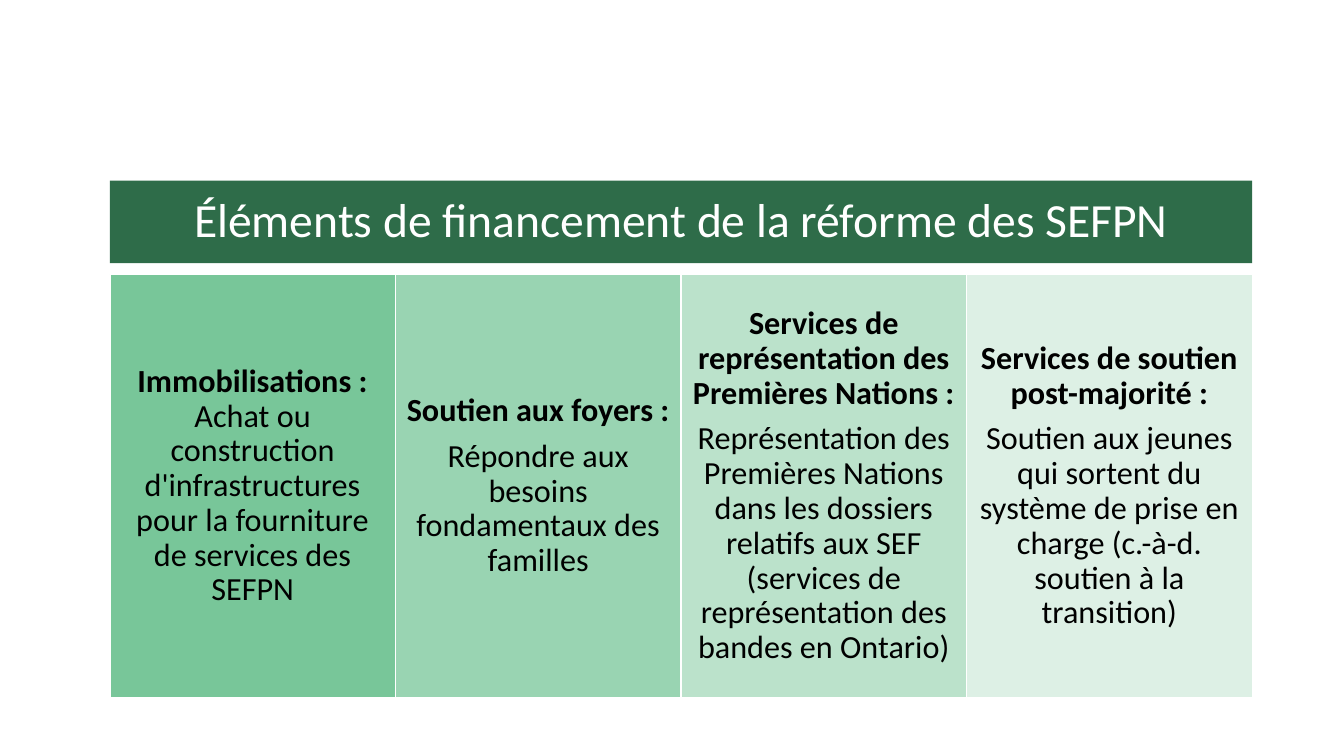
from dataclasses import dataclass

from lxml import etree
from pptx import Presentation
from pptx.dml.color import RGBColor
from pptx.enum.shapes import MSO_SHAPE
from pptx.enum.text import MSO_ANCHOR, PP_ALIGN
from pptx.oxml.ns import qn
from pptx.util import Pt

RECTANGLE = MSO_SHAPE.RECTANGLE
MIDDLE = MSO_ANCHOR.MIDDLE
CENTER = PP_ALIGN.CENTER


@dataclass(frozen=True)
class Theme:
    font: str = "Calibri"
    banner: RGBColor = RGBColor(0x2E, 0x6C, 0x49)
    column: RGBColor = RGBColor(0x78, 0xC6, 0x99)
    light: RGBColor = RGBColor(0xFF, 0xFF, 0xFF)
    dark: RGBColor = RGBColor(0, 0, 0)
    title_size: int = 34
    body_size: int = 23


THEME = Theme()

TITLE = "Éléments de financement de la réforme des SEFPN"

# Each column holds paragraphs, each paragraph holds (text, bold) spans.
COLUMNS = [
    [[("Immobilisations : ", True),
      ("Achat ou construction d'infrastructures pour la fourniture "
       "de services des SEFPN", False)]],
    [[("Soutien aux foyers :", True)],
     [("Répondre aux besoins fondamentaux des familles", False)]],
    [[("Services de représentation des Premières Nations :", True)],
     [("Représentation des Premières Nations dans les dossiers relatifs aux SEF "
       "(services de représentation des bandes en Ontario)", False)]],
    [[("Services de soutien post-majorité :", True)],
     [("Soutien aux jeunes qui sortent du système de prise en charge "
       "(c.-à-d. soutien à la transition)", False)]],
]


def add_panel(page, left, top, width, height, fill, opacity=100):
    panel = page.shapes.add_shape(RECTANGLE, Pt(left), Pt(top), Pt(width), Pt(height))
    panel.shadow.inherit = False
    panel.fill.solid()
    panel.fill.fore_color.rgb = fill
    panel.line.fill.background()
    if opacity < 100:
        color = panel.fill._xPr.find(qn("a:solidFill")).find(qn("a:srgbClr"))
        etree.SubElement(color, qn("a:alpha"), val=str(opacity * 1000))
    return panel


def write_paragraphs(panel, paragraphs, size, color, inset):
    frame = panel.text_frame
    frame.word_wrap = True
    frame.vertical_anchor = MIDDLE
    frame.margin_left = frame.margin_right = Pt(inset)
    frame.margin_top = frame.margin_bottom = Pt(inset)
    for index, spans in enumerate(paragraphs):
        para = frame.add_paragraph() if index else frame.paragraphs[0]
        para.alignment = CENTER
        para.line_spacing = 0.9
        para.space_after = Pt(round(size * 0.35))
        for text, bold in spans:
            span = para.add_run()
            span.text = text
            span.font.name = THEME.font
            span.font.size = Pt(size)
            span.font.bold = bold
            span.font.color.rgb = color


def add_banner(page, left, top, width, height):
    banner = add_panel(page, left, top, width, height, THEME.banner)
    write_paragraphs(banner, [[(TITLE, False)]], THEME.title_size, THEME.light, 10)


def add_columns(page, left, top, width, height):
    """Split the box into equal columns that grow paler to the right."""
    count = len(COLUMNS)
    column_width = width / count
    for index, paragraphs in enumerate(COLUMNS):
        opacity = 100 * (count - index) // count
        column = add_panel(page, left + index * column_width, top,
                           column_width, height, THEME.column, opacity)
        column.line.color.rgb = THEME.light
        column.line.width = Pt(1)
        write_paragraphs(column, paragraphs, THEME.body_size, THEME.dark, 7.2)


def main():
    deck = Presentation()
    deck.slide_width, deck.slide_height = Pt(960), Pt(540)
    page = deck.slides.add_slide(deck.slide_layouts[6])
    left, width = 78.5, 816
    add_banner(page, left, 129, width, 59)
    add_columns(page, left, 196, width, 302.5)
    deck.save("out.pptx")


if __name__ == "__main__":
    main()
